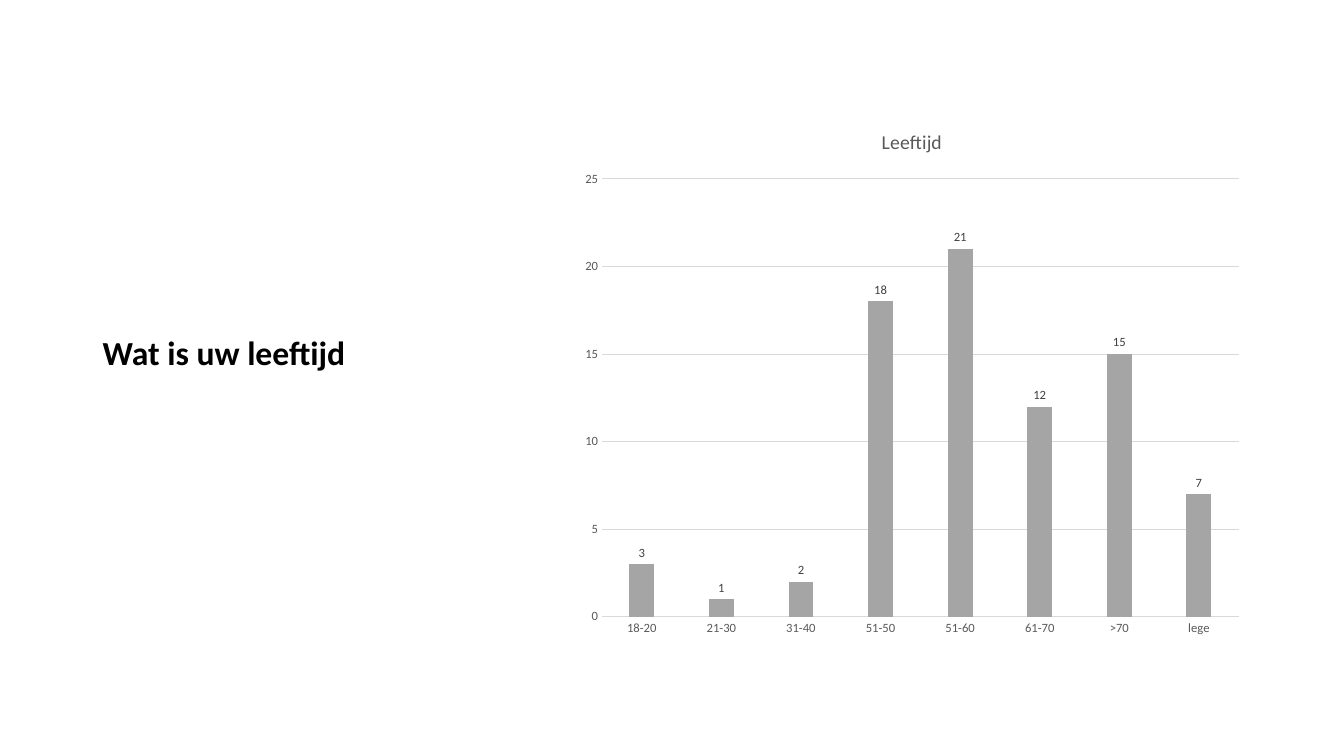
import pptx
import pptx.chart.data
import pptx.dml.color
import pptx.enum.chart
import pptx.enum.text
import pptx.util

Inches = pptx.util.Inches
Pt = pptx.util.Pt
FONT = "Calibri"
AGES = {
    "18-20": 3, "21-30": 1, "31-40": 2, "51-50": 18,
    "51-60": 21, "61-70": 12, ">70": 15, "lege": 7,
}


def colour(value):
    return pptx.dml.color.RGBColor.from_string(value)


def set_font(font, size, value, bold=False):
    font.name = FONT
    font.size = Pt(size)
    font.bold = bold
    font.color.rgb = colour(value)


def set_line(line, value):
    line.color.rgb = colour(value)
    line.width = Pt(0.75)


def add_heading(page, text, left, top, width, height):
    box = page.shapes.add_textbox(Inches(left), Inches(top), Inches(width), Inches(height))
    frame = box.text_frame
    frame.word_wrap = True
    frame.vertical_anchor = pptx.enum.text.MSO_ANCHOR.BOTTOM
    para = frame.paragraphs[0]
    para.text = text
    para.line_spacing = 0.9
    set_font(para.font, 24, "000000", bold=True)


def style_axis(axis):
    axis.major_tick_mark = pptx.enum.chart.XL_TICK_MARK.NONE
    axis.minor_tick_mark = pptx.enum.chart.XL_TICK_MARK.NONE
    set_font(axis.tick_labels.font, 9, "595959")


def style_axes(chart):
    style_axis(chart.category_axis)
    set_line(chart.category_axis.format.line, "D9D9D9")
    values = chart.value_axis
    style_axis(values)
    values.minimum_scale = 0
    values.maximum_scale = 25
    values.major_unit = 5
    values.format.line.fill.background()
    set_line(values.major_gridlines.format.line, "D9D9D9")


def style_columns(plot):
    plot.gap_width = 219
    plot.overlap = -27
    plot.vary_by_categories = False
    columns = plot.series[0]
    columns.format.fill.solid()
    columns.format.fill.fore_color.rgb = colour("A5A5A5")
    labels = columns.data_labels
    labels.show_value = True
    labels.position = pptx.enum.chart.XL_LABEL_POSITION.OUTSIDE_END
    set_font(labels.font, 9, "404040")


def add_column_chart(page, title, counts, left, top, width, height):
    data = pptx.chart.data.CategoryChartData()
    data.categories = list(counts)
    data.add_series("Series 1", list(counts.values()))
    chart = page.shapes.add_chart(
        pptx.enum.chart.XL_CHART_TYPE.COLUMN_CLUSTERED,
        Inches(left), Inches(top), Inches(width), Inches(height), data,
    ).chart
    set_font(chart.font, 10, "000000")
    chart.has_legend = False
    chart.has_title = True
    para = chart.chart_title.text_frame.paragraphs[0]
    para.text = title
    set_font(para.font, 14, "595959")
    style_axes(chart)
    style_columns(chart.plots[0])


def main():
    deck = pptx.Presentation()
    deck.slide_width = Inches(13.33)
    deck.slide_height = Inches(7.5)
    page = deck.slides.add_slide(deck.slide_layouts[6])
    add_heading(page, "Wat is uw leeftijd", 0.92, 0.5, 4.46, 3.25)
    add_column_chart(page, "Leeftijd", AGES, 5.67, 1.08, 6.75, 5.33)
    deck.save("out.pptx")


if __name__ == "__main__":
    main()
